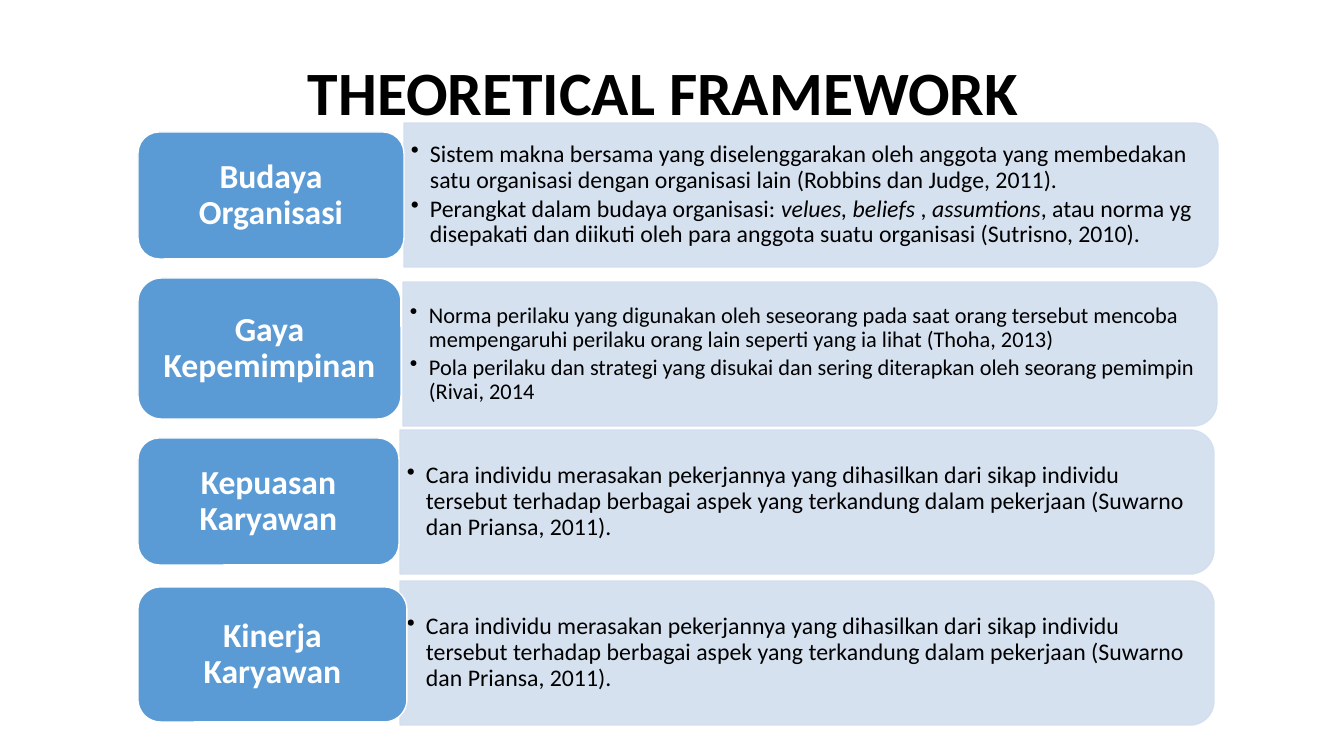
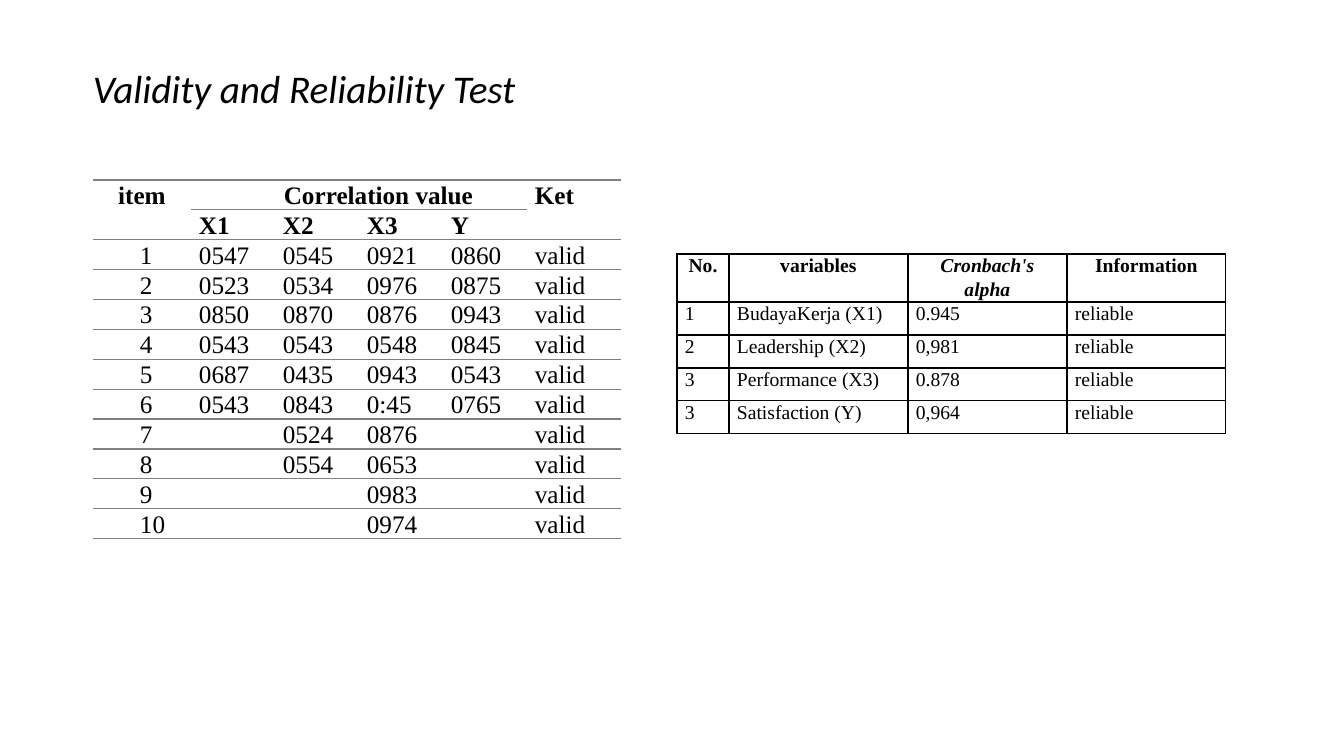
import lxml.etree
import pptx
import pptx.dml.color
import pptx.enum.shapes
import pptx.enum.text
import pptx.oxml.ns
import pptx.util

PX = 914400 / 100.8
BLACK = pptx.dml.color.RGBColor(0x00, 0x00, 0x00)
WHITE = pptx.dml.color.RGBColor(0xFF, 0xFF, 0xFF)
BLUE = pptx.dml.color.RGBColor(0x5B, 0x9B, 0xD5)
PALE_BLUE = pptx.dml.color.RGBColor(0xD2, 0xDE, 0xEF)
GREY = pptx.dml.color.RGBColor(0x7F, 0x7F, 0x7F)
SANS = "Calibri"
SERIF = "Times New Roman"

ALIGN = pptx.enum.text.PP_ALIGN
ANCHOR = pptx.enum.text.MSO_ANCHOR
SHAPE = pptx.enum.shapes.MSO_SHAPE
qn = pptx.oxml.ns.qn


def px(length):
    return pptx.util.Emu(round(length * PX))


def add_xml(parent, tag, **attributes):
    return lxml.etree.SubElement(parent, qn(tag), **attributes)


class Deck:
    """Holds the presentation, its text and shape style, and the current slide."""

    def __init__(self):
        self.presentation = pptx.Presentation()
        self.presentation.slide_width = px(1344)
        self.presentation.slide_height = px(756)
        self.slide = None

    def start_slide(self, title, box, size, align, anchor, bold=False, italic=False):
        self.slide = self.presentation.slides.add_slide(self.presentation.slide_layouts[5])
        heading = self.slide.shapes.title
        heading.left, heading.top, heading.width, heading.height = map(px, box)
        self.frame(heading.text_frame, anchor, 10, 5)
        paragraph = heading.text_frame.paragraphs[0]
        paragraph.text = title
        self.style(paragraph, size, align=align, bold=bold, italic=italic)

    def frame(self, text_frame, anchor, side, edge):
        text_frame.word_wrap = True
        text_frame.auto_size = pptx.enum.text.MSO_AUTO_SIZE.NONE
        text_frame.vertical_anchor = anchor
        text_frame.margin_left = text_frame.margin_right = px(side)
        text_frame.margin_top = text_frame.margin_bottom = px(edge)

    def style(self, paragraph, size, color=BLACK, font=SANS, align=ALIGN.LEFT,
              spacing=0.9, bold=False, italic=False):
        paragraph.alignment = align
        paragraph.line_spacing = spacing
        for run in paragraph.runs:
            run.font.name = font
            run.font.size = pptx.util.Pt(size)
            run.font.color.rgb = color
            run.font.bold = bold
            run.font.italic = italic

    def shape(self, kind, box, fill, line):
        shape = self.slide.shapes.add_shape(kind, *map(px, box))
        shape.shadow.inherit = False
        shape.fill.solid()
        shape.fill.fore_color.rgb = fill
        shape.line.color.rgb = line
        shape.line.width = pptx.util.Pt(1)
        return shape

    def label(self, text, box):
        label = self.shape(SHAPE.ROUNDED_RECTANGLE, box, BLUE, WHITE)
        self.frame(label.text_frame, ANCHOR.MIDDLE, 16, 11)
        paragraph = label.text_frame.paragraphs[0]
        paragraph.text = text
        self.style(paragraph, 24, WHITE, align=ALIGN.CENTER, bold=True)

    def panel(self, left, top, width=814, height=144):
        """Draw a panel rounded on its right side: an upright shape turned by 90 degrees."""
        box = (left + (width - height) / 2, top - (width - height) / 2, height, width)
        panel = self.shape(SHAPE.ROUND_2_SAME_RECTANGLE, box, PALE_BLUE, PALE_BLUE)
        panel.rotation = 90
        for color in panel._element.spPr.iter(qn("a:srgbClr")):
            add_xml(color, "a:alpha", val="90000")

    def bullets(self, items, box, size):
        """Write bullets; each item is a tuple of pieces, every second one in italics."""
        text_frame = self.slide.shapes.add_textbox(*map(px, box)).text_frame
        self.frame(text_frame, ANCHOR.MIDDLE, 7, 4)
        for index, pieces in enumerate(items):
            paragraph = text_frame.add_paragraph() if index else text_frame.paragraphs[0]
            properties = paragraph._p.get_or_add_pPr()
            properties.set("marL", str(px(19)))
            properties.set("indent", str(px(-19)))
            add_xml(properties, "a:buChar", char="•")
            for piece in pieces:
                paragraph.add_run().text = piece
            self.style(paragraph, size)
            paragraph.space_after = pptx.util.Pt(2.5)
            for run in paragraph.runs[1::2]:
                run.font.italic = True

    def table(self, rows, left, top, widths, heights, size, line, sides,
              header_rows=1, merges=(), indented=(), italic_cells=()):
        table = self.slide.shapes.add_table(
            len(rows), len(widths), px(left), px(top), px(sum(widths)), px(sum(heights))).table
        table.first_row = table.horz_banding = False
        for column, width in zip(table.columns, widths):
            column.width = px(width)
        for row, height in zip(table.rows, heights):
            row.height = px(height)
        for first, last in merges:
            table.cell(*first).merge(table.cell(*last))
        for r, values in enumerate(rows):
            for c, value in enumerate(values):
                cell = table.cell(r, c)
                cell.margin_left = cell.margin_right = px(8)
                cell.margin_top = cell.margin_bottom = 0
                paragraph = cell.text_frame.paragraphs[0]
                if value:
                    paragraph.text = value
                else:
                    add_xml(paragraph._p, "a:endParaRPr", sz="1000")
                if (r, c) in indented:
                    paragraph._p.get_or_add_pPr().set("indent", str(px(39)))
                centred = r == 0 and value != "Ket"
                self.style(paragraph, size, font=SERIF, spacing=1.07,
                           align=ALIGN.CENTER if centred else ALIGN.JUSTIFY,
                           bold=r < header_rows, italic=(r, c) in italic_cells)
                self.borders(cell, line, "" if cell.is_spanned else sides)
                cell.fill.background()

    def borders(self, cell, color, sides):
        properties = cell._tc.get_or_add_tcPr()
        for side in "LRTB":
            edge = add_xml(properties, "a:ln" + side, w=str(pptx.util.Pt(1)))
            if side in sides:
                add_xml(add_xml(edge, "a:solidFill"), "a:srgbClr", val=str(color))
            else:
                add_xml(edge, "a:noFill")


SATISFACTION = (
    "Cara individu merasakan pekerjannya yang dihasilkan dari sikap individu tersebut terhadap "
    "berbagai aspek yang terkandung dalam pekerjaan (Suwarno dan Priansa, 2011).",)

# Concept, label top, width and height, panel left and top, text size, bullets
CONCEPTS = [
    ("Budaya Organisasi", (132, 266, 127), (404, 123), 17, [
        ("Sistem makna bersama yang diselenggarakan oleh anggota yang membedakan satu "
         "organisasi dengan organisasi lain (Robbins dan Judge, 2011).",),
        ("Perangkat dalam budaya organisasi: ", "velues, beliefs", " , ", "assumtions",
         ", atau norma yg disepakati dan diikuti oleh para anggota suatu organisasi "
         "(Sutrisno, 2010).")]),
    ("Gaya Kepemimpinan", (278, 263, 141), (403, 282), 16, [
        ("Norma perilaku yang digunakan oleh seseorang pada saat orang tersebut mencoba "
         "mempengaruhi perilaku orang lain seperti yang ia lihat (Thoha, 2013)",),
        ("Pola perilaku dan strategi yang disukai dan sering diterapkan oleh seorang pemimpin "
         "(Rivai, 2014",)]),
    ("Kepuasan Karyawan", (438, 261, 127), (400, 430), 17, [SATISFACTION]),
    ("Kinerja Karyawan", (587, 269, 135), (400, 581), 17, [SATISFACTION]),
]

CORRELATIONS = [
    ("0547", "0545", "0921", "0860"),
    ("0523", "0534", "0976", "0875"),
    ("0850", "0870", "0876", "0943"),
    ("0543", "0543", "0548", "0845"),
    ("0687", "0435", "0943", "0543"),
    ("0543", "0843", "0:45", "0765"),
    ("", "0524", "0876", ""),
    ("", "0554", "0653", ""),
    ("", "", "0983", ""),
    ("", "", "0974", ""),
]

RELIABILITY = [
    ("No.", "variables", "Cronbach's alpha", "Information"),
    ("1", "BudayaKerja (X1)", "0.945", "reliable"),
    ("2", "Leadership (X2)", "0,981", "reliable"),
    ("3", "Performance (X3)", "0.878", "reliable"),
    ("3", "Satisfaction (Y)", "0,964", "reliable"),
]


def theoretical_framework(deck):
    deck.start_slide("THEORETICAL FRAMEWORK", (84, 23, 1159, 146), 44,
                     ALIGN.CENTER, ANCHOR.MIDDLE, bold=True)
    for concept, label_box, (left, top), size, items in CONCEPTS:
        deck.panel(left, top)
        deck.bullets(items, (left, top + 7, 807, 130), size)
        deck.label(concept, (138, *label_box))


def validity_and_reliability(deck):
    deck.start_slide("Validity and Reliability Test", (83, 65, 574, 59), 28,
                     ALIGN.LEFT, ANCHOR.TOP, italic=True)
    validity = [("item", "Correlation value", "", "", "", "Ket"),
                ("", "X1", "X2", "X3", "Y", "")]
    validity += [(str(item), *values, "valid") for item, values in enumerate(CORRELATIONS, 1)]
    deck.table(validity, 93, 180, [98] + [84] * 4 + [94], [29] * len(validity), 18, GREY, "TB",
               header_rows=2,
               merges=[((0, 0), (1, 0)), ((0, 1), (0, 4)), ((0, 5), (1, 5))],
               indented=[(0, 1)] + [(r, 0) for r in range(2, len(validity))])
    deck.table(RELIABILITY, 677, 254, [52, 179, 159, 159], [48] + [33] * 4, 14, BLACK, "LRTB",
               italic_cells=[(0, 2)])


def main():
    deck = Deck()
    theoretical_framework(deck)
    validity_and_reliability(deck)
    deck.presentation.save("out.pptx")


if __name__ == "__main__":
    main()
